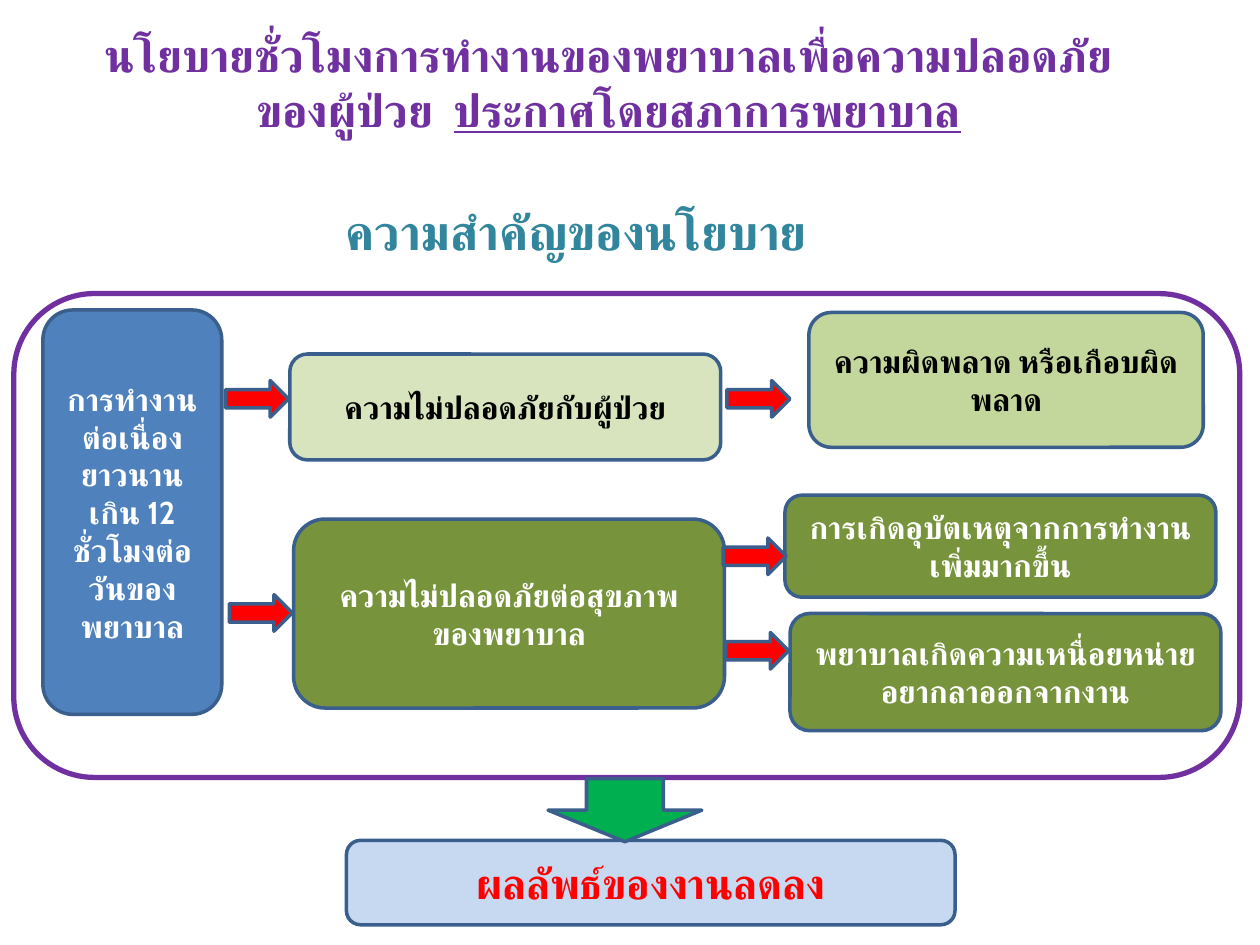
from lxml.etree import SubElement
from pptx import Presentation
from pptx.dml.color import RGBColor
from pptx.enum.lang import MSO_LANGUAGE_ID as Language
from pptx.enum.shapes import MSO_SHAPE as Shape
from pptx.enum.text import MSO_ANCHOR as Anchor, MSO_AUTO_SIZE as AutoSize, PP_ALIGN as Align
from pptx.oxml.ns import qn
from pptx.util import Inches, Pt

FONT = "Cabin"
WIDTH, HEIGHT = 10, 7.5
WHITE, BLACK, RED, PURPLE = "FFFFFF", "000000", "FF0000", "7030A0"
TEAL, EDGE, GREEN, OLIVE = "31859C", "3A5F8C", "00B050", "77933C"

# Places are left, top, width, height in percent of the slide's size.
TITLE = ("ความสำคัญของนโยบาย", (17.9, 20, 55.7, 8.93))
HEADING = [("นโยบายชั่วโมงการทำงานของพยาบาลเพื่อความปลอดภัยของผู้ป่วย  ", False),
           ("ประกาศโดยสภาการพยาบาล", True)]
HEADING_PLACE = (5.8, 1.07, 85, 15.2)
FRAME_PLACE = (1.1, 31.07, 97.3, 51.2)

BOX_WIDTH = 34.2
BOXES = [  # text, place, fill, text colour, text size
    ("การทำงานต่อเนื่องยาวนานเกิน 12 ชั่วโมงต่อวันของพยาบาล",
     (3.4, 32.8, 14.2, 42.8), "4F81BD", WHITE, 18),
    ("ความไม่ปลอดภัยกับผู้ป่วย", (23, 37.47, BOX_WIDTH, 11.2), "D7E4BD", BLACK, 18),
    ("ความไม่ปลอดภัยต่อสุขภาพของพยาบาล", (23.3, 54.93, BOX_WIDTH, 20), OLIVE, WHITE, 18),
    ("การเกิดอุบัตเหตุจากการทำงานเพิ่มมากขึ้น",
     (62.3, 52.4, BOX_WIDTH, 10.8), OLIVE, WHITE, 18),
    ("พยาบาลเกิดความเหนื่อยหน่าย อยากลาออกจากงาน",
     (62.7, 64.93, BOX_WIDTH, 12.4), OLIVE, WHITE, 18),
    ("ความผิดพลาด หรือเกือบผิดพลาด", (64.2, 33.07, 31.3, 14.27), "C3D69B", BLACK, 18),
    ("ผลลัพธ์ของงานลดลง", (27.5, 88.93, 48.3, 8.93), "C6D9F1", RED, 24),
]

ARROW_SIZE = (5, 3.87)
ARROW_CORNERS = [(17.9, 40.27), (18.2, 62.93), (57.7, 40.27), (57.4, 56.93), (57.6, 66.93)]
DOWN_ARROW_PLACE = (43.5, 82.4, 12.2, 6.67)


def color(code):
    return RGBColor.from_string(code)


def to_lengths(place):
    return [Inches(share * side / 100) for share, side in zip(place, (WIDTH, HEIGHT) * 2)]


def write(shape, spans, size, code):
    """Fill a shape with one centred paragraph of (text, underlined) spans."""
    frame = shape.text_frame
    frame.word_wrap = True
    frame.auto_size = AutoSize.NONE
    frame.vertical_anchor = Anchor.MIDDLE
    para = frame.paragraphs[0]
    para.alignment = Align.CENTER
    for text, underlined in spans:
        span = para.add_run()
        span.text = text
        font = span.font
        font.name, font.size, font.bold = FONT, Pt(size), True
        font.language_id = Language.THAI
        font.color.rgb = color(code)
        if underlined:
            font.underline = True
        # Thai letters take the complex-script typeface
        SubElement(font._element, qn("a:cs")).set("typeface", FONT)


def add_shape(page, kind, place, fill=None, line=EDGE, weight=2):
    shape = page.shapes.add_shape(kind, *to_lengths(place))
    shape.shadow.inherit = False
    if fill:
        shape.fill.solid()
        shape.fill.fore_color.rgb = color(fill)
    else:
        shape.fill.background()
    shape.line.color.rgb = color(line)
    shape.line.width = Pt(weight)
    return shape


def main():
    deck = Presentation()
    deck.slide_width, deck.slide_height = Inches(WIDTH), Inches(HEIGHT)
    page = deck.slides.add_slide(deck.slide_layouts[5])

    text, place = TITLE
    title = page.shapes.title
    title.left, title.top, title.width, title.height = to_lengths(place)
    write(title, [(text, False)], 28, TEAL)

    for text, place, fill, code, size in BOXES:
        box = add_shape(page, Shape.ROUNDED_RECTANGLE, place, fill)
        write(box, [(text, False)], size, code)

    add_shape(page, Shape.ROUNDED_RECTANGLE, FRAME_PLACE, line=PURPLE, weight=3)
    for corner in ARROW_CORNERS:
        add_shape(page, Shape.RIGHT_ARROW, corner + ARROW_SIZE, RED)
    add_shape(page, Shape.DOWN_ARROW, DOWN_ARROW_PLACE, GREEN)

    heading = page.shapes.add_textbox(*to_lengths(HEADING_PLACE))
    write(heading, HEADING, 25.9, PURPLE)

    deck.save("out.pptx")


if __name__ == "__main__":
    main()
